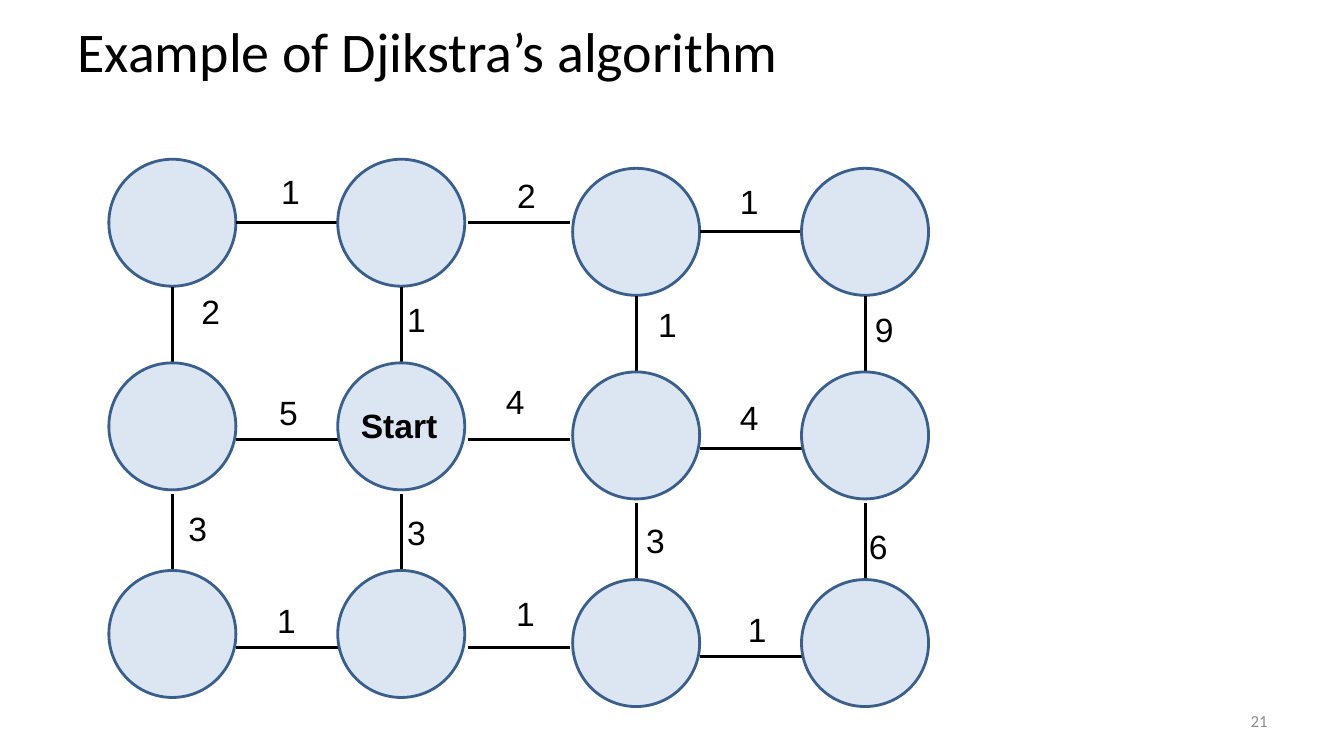
from pptx import Presentation
from pptx import util as u
from pptx.dml import color
from pptx.enum import shapes, text
from pptx.oxml import parse_xml
from pptx.oxml.ns import nsdecls

SIZE = 1.26                       # node diameter
COLS = [0, 2.27, 4.6, 6.87]       # node offsets within the graph
ROWS = [0, 2.02, 4.08]
DROP = [0, 0, 0.09, 0.09]         # the right half sits slightly lower
EDGE_Y = [0.63, 0.76, 0.76]       # edge height within each row of nodes
GAP_X = [0, 0.03, 0]              # space between nodes and edge ends
GAP_Y = [0.01, 0.04]

# Edge weights: text, left and top of the label within the graph
WEIGHTS = [
    ("1", 1.61, 0.07), ("2", 3.95, 0.11), ("1", 6.16, 0.17),
    ("2", 0.82, 1.26), ("1", 2.86, 1.34), ("1", 5.35, 1.39), ("9", 7.5, 1.44),
    ("5", 1.59, 2.26), ("4", 3.84, 2.15), ("4", 6.16, 2.31),
    ("3", 0.69, 3.41), ("3", 2.86, 3.45), ("3", 5.23, 3.53), ("6", 7.44, 3.59),
    ("1", 1.57, 4.32), ("1", 3.94, 4.25), ("1", 6.24, 4.41),
]


def rgb(value):
    return color.RGBColor.from_string(value)


def box_of(*lengths):
    return [u.Inches(n) for n in lengths]


def write(tf, words, fmt, hue="000000", align=text.PP_ALIGN.LEFT):
    p = tf.paragraphs[0]
    p.alignment = align
    r = p.add_run()
    r.text = words
    for name, value in fmt.items():
        setattr(r.font, name, value)
    r.font.color.rgb = rgb(hue)


def add_label(s, words, left, top, width=0.4, bold=False):
    tf = s.shapes.add_textbox(*box_of(left, top, width, 0.51)).text_frame
    tf.word_wrap = False
    write(tf, words, {"name": "Arial", "size": u.Pt(24), "bold": bold})


def add_node(s, left, top):
    sp = s.shapes.add_shape(shapes.MSO_SHAPE.OVAL, *box_of(left, top, SIZE, SIZE))
    sp.shadow.inherit = False
    sp.fill.solid()
    sp.fill.fore_color.rgb = rgb("DCE6F2")
    sp.line.color.rgb = rgb("3A5F8C")
    sp.line.width = u.Pt(2)


def add_edge(s, x1, y1, x2, y2):
    line = s.shapes.add_connector(shapes.MSO_CONNECTOR.STRAIGHT, *box_of(x1, y1, x2, y2))
    line.line.color.rgb = rgb("000000")
    line.line.width = u.Pt(2.25)
    line._element.spPr.append(parse_xml(f"<a:effectLst {nsdecls('a')}/>"))


def add_title(s, left, top, width, height):
    sp = s.shapes.title
    sp.left, sp.top, sp.width, sp.height = box_of(left, top, width, height)
    sp.text_frame.vertical_anchor = text.MSO_ANCHOR.MIDDLE
    write(sp.text_frame, "Example of Djikstra’s algorithm",
          {"name": "Calibri", "size": u.Pt(40)})


def add_graph(s, left, top):
    for i, row in enumerate(ROWS):
        for j, col in enumerate(COLS):
            x, y = left + col, top + row + DROP[j]
            add_node(s, x, y)
            # Edge to the right
            if j + 1 < len(COLS):
                add_edge(s, x + SIZE + GAP_X[j], y + EDGE_Y[i],
                         left + COLS[j + 1] - GAP_X[j], y + EDGE_Y[i])
            # Edge downwards
            if i + 1 < len(ROWS):
                add_edge(s, x + SIZE / 2, y + SIZE + GAP_Y[i],
                         x + SIZE / 2, top + ROWS[i + 1] + DROP[j])
    for words, x, y in WEIGHTS:
        add_label(s, words, left + x, top + y)
    add_label(s, "Start", left + 2.4, top + 2.39, 0.99, True)


def add_page_number(s, left, top, width, height):
    tf = s.shapes.add_textbox(*box_of(left, top, width, height)).text_frame
    tf.word_wrap = True
    tf.vertical_anchor = text.MSO_ANCHOR.MIDDLE
    write(tf, "21", {"name": "Calibri", "size": u.Pt(12)}, "8C8C8C",
          text.PP_ALIGN.RIGHT)


def main():
    prs = Presentation()
    prs.slide_width, prs.slide_height = box_of(13.33, 7.5)
    s = prs.slides.add_slide(prs.slide_layouts[5])
    add_title(s, 0.67, 0, 12, 1)
    add_graph(s, 1.08, 1.58)
    add_page_number(s, 9.56, 6.95, 3.11, 0.4)
    prs.save("out.pptx")


if __name__ == "__main__":
    main()
